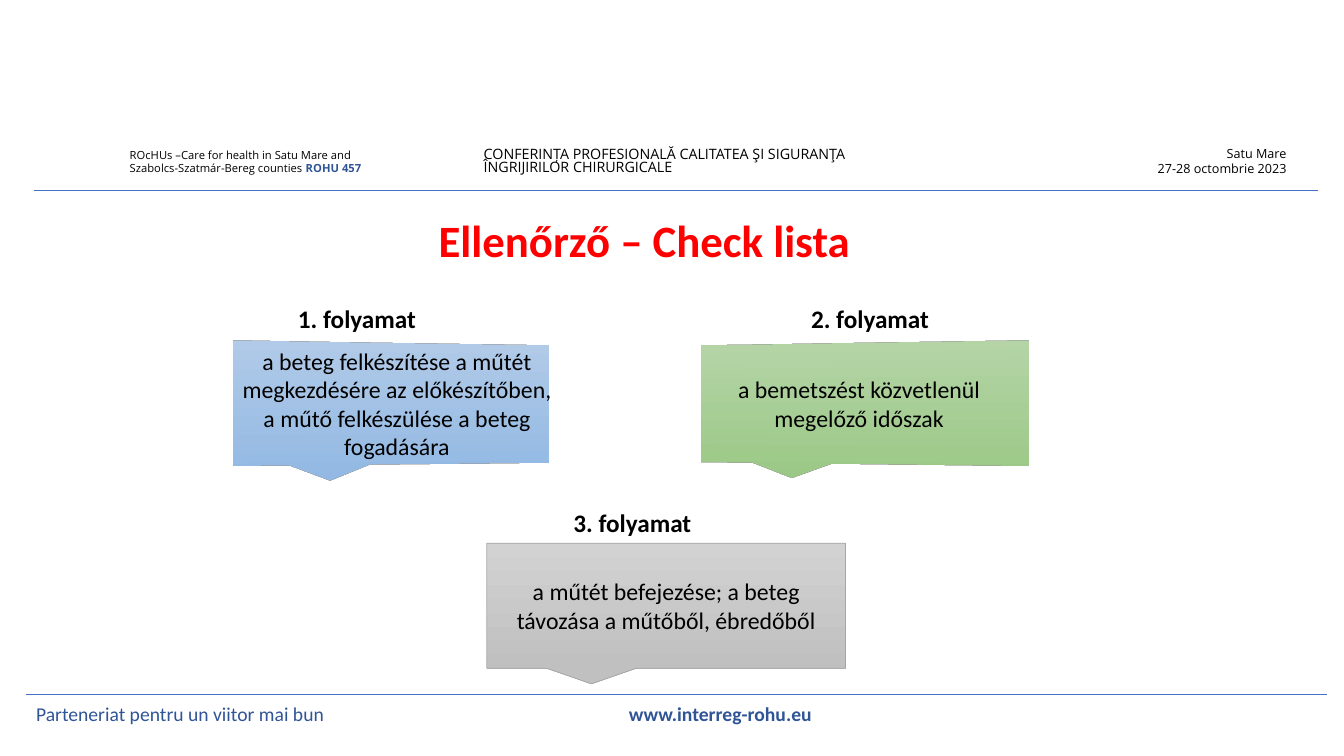
from lxml.etree import SubElement
from pptx import Presentation
from pptx.dml.color import RGBColor
from pptx.enum.shapes import MSO_CONNECTOR, MSO_SHAPE
from pptx.enum.text import MSO_ANCHOR, MSO_AUTO_SIZE, PP_ALIGN
from pptx.oxml.ns import qn
from pptx.util import Cm, Pt

BLACK = RGBColor(0x00, 0x00, 0x00)
RED = RGBColor(0xFF, 0x00, 0x00)
NAVY = RGBColor(0x2F, 0x55, 0x97)
RULE_BLUE = RGBColor(0x44, 0x72, 0xC4)
BLUES = [RGBColor(0xB1, 0xCB, 0xE9), RGBColor(0x93, 0xB9, 0xE4), RGBColor(0x5B, 0x9B, 0xD5)]
GREENS = [RGBColor(0xB5, 0xD5, 0xA7), RGBColor(0x9C, 0xC9, 0x87), RGBColor(0x70, 0xAD, 0x47)]
GREYS = [RGBColor(0xD2, 0xD2, 0xD2), RGBColor(0xC0, 0xC0, 0xC0), RGBColor(0xA5, 0xA5, 0xA5)]

# Content: positions are left, top, width, height in cm
TITLE = "Ellenőrző – Check lista"
TITLE_AT = (10.8, 5.38, 10.92, 1.02)
# Each header: position, size, alignment, line spacing, paragraphs of (text, bold, colour)
HEADERS = [
    ((11.94, 3.61, 20.52, 1.02), 10.2, PP_ALIGN.LEFT, 0.8,
     [[("CONFERINȚA PROFESIONALĂ CALITATEA ŞI SIGURANŢA \vÎNGRIJIRILOR CHIRURGICALE",
        False, BLACK)]]),
    ((27.03, 3.56, 5.64, 1.02), 9, PP_ALIGN.RIGHT, 1,
     [[("Satu Mare", False, BLACK)], [("27-28 octombrie 2023", False, BLACK)]]),
    ((3.02, 3.61, 8.64, 0.94), 8, PP_ALIGN.LEFT, 1,
     [[("ROcHUs –Care for health in Satu Mare and", False, BLACK)],
      [("Szabolcs-Szatmár-Bereg counties ", False, BLACK), ("ROHU 457", True, NAVY)]]),
]
FOOTER_AT = (0.66, 17.48, 32.79, 1.02)
FOOTER_TAB = 14.94
FOOTER = [("Parteneriat pentru un viitor mai bun\t", False, NAVY),
          ("www.interreg-rohu.eu", True, NAVY)]
RULES = [(0.86, 33.22, 4.8), (0.66, 33.45, 17.5)]  # left, right, height on page
# Each step: label, label position, text, callout position, colours, camera
STEPS = [
    ("1. folyamat", (7.26, 7.52, 5.49, 1.02),
     "a beteg felkészítése a műtét megkezdésére az előkészítőben, "
     "a műtő felkészülése a beteg fogadására",
     (5.79, 8.66, 8.43, 3.02), BLUES, "perspectiveRight"),
    ("2. folyamat", (20.19, 7.52, 4.32, 1.02),
     "a bemetszést közvetlenül megelőző időszak",
     (17.27, 8.66, 8.76, 3.02), GREENS, "perspectiveLeft"),
    ("3. folyamat", (14.2, 12.65, 4.47, 1.02),
     "a műtét befejezése; a beteg távozása a műtőből, ébredőből",
     (12.27, 13.69, 9.04, 3.15), GREYS, None),
]


def cm(values):
    return [Cm(value) for value in values]


def add_spans(para, spans, size, font):
    for text, bold, color in spans:
        for number, line in enumerate(text.split("\v")):
            if number:
                para.add_line_break()
            span = para.add_run()
            span.text = line
            span.font.name, span.font.size = font, Pt(size)
            span.font.bold, span.font.color.rgb = bold, color


def write(box, paragraphs, size, font="Calibri", align=PP_ALIGN.LEFT,
          spacing=1, anchor=MSO_ANCHOR.TOP):
    frame = box.text_frame
    frame.word_wrap = True
    frame.auto_size = MSO_AUTO_SIZE.NONE
    frame.vertical_anchor = anchor
    for number, spans in enumerate(paragraphs):
        para = frame.add_paragraph() if number else frame.paragraphs[0]
        para.alignment, para.line_spacing = align, spacing
        add_spans(para, spans, size, font)
    return frame.paragraphs[0]


def set_camera(shape, camera):
    scene = SubElement(shape._element.spPr, qn("a:scene3d"))
    SubElement(scene, qn("a:camera"), prst=camera)
    SubElement(scene, qn("a:lightRig"), rig="threePt", dir="t")


deck = Presentation()
deck.slide_width, deck.slide_height = Cm(33.87), Cm(19.05)
page = deck.slides.add_slide(deck.slide_layouts[5])

# Header
for at, size, align, spacing, paragraphs in HEADERS:
    write(page.shapes.add_textbox(*cm(at)), paragraphs, size, "Open Sans", align, spacing)

# Rules under the header and above the footer
for left, right, height in RULES:
    rule = page.shapes.add_connector(MSO_CONNECTOR.STRAIGHT, *cm((left, height, right, height)))
    rule.line.color.rgb, rule.line.width = RULE_BLUE, Pt(0.5)
    SubElement(rule._element.spPr, qn("a:effectLst"))

# Footer, with the address at a tab stop
footer = page.shapes.add_textbox(*cm(FOOTER_AT))
footer_para = write(footer, [FOOTER], 14, anchor=MSO_ANCHOR.MIDDLE)
tabs = SubElement(footer_para._p.get_or_add_pPr(), qn("a:tabLst"))
SubElement(tabs, qn("a:tab"), pos=str(Cm(FOOTER_TAB)), algn="l")

# Title
title = page.shapes.title
title.left, title.top, title.width, title.height = cm(TITLE_AT)
write(title, [[(TITLE, True, RED)]], 32, spacing=0.9)

# Steps: a callout with its label above
for label, label_at, text, at, (light, dark, edge), camera in STEPS:
    callout = page.shapes.add_shape(MSO_SHAPE.RECTANGULAR_CALLOUT, *cm(at))
    callout.shadow.inherit = False
    callout.fill.gradient()
    callout.fill.gradient_angle = 270
    for stop, color, position in zip(callout.fill.gradient_stops, (light, dark), (0, 1)):
        stop.color.rgb, stop.position = color, position
    callout.line.color.rgb, callout.line.width = edge, Pt(0.5)
    if camera:
        set_camera(callout, camera)
    write(callout, [[(text, False, BLACK)]], 17, align=PP_ALIGN.CENTER, anchor=MSO_ANCHOR.MIDDLE)
    write(page.shapes.add_textbox(*cm(label_at)), [[(label, True, BLACK)]], 18)

deck.save("out.pptx")
